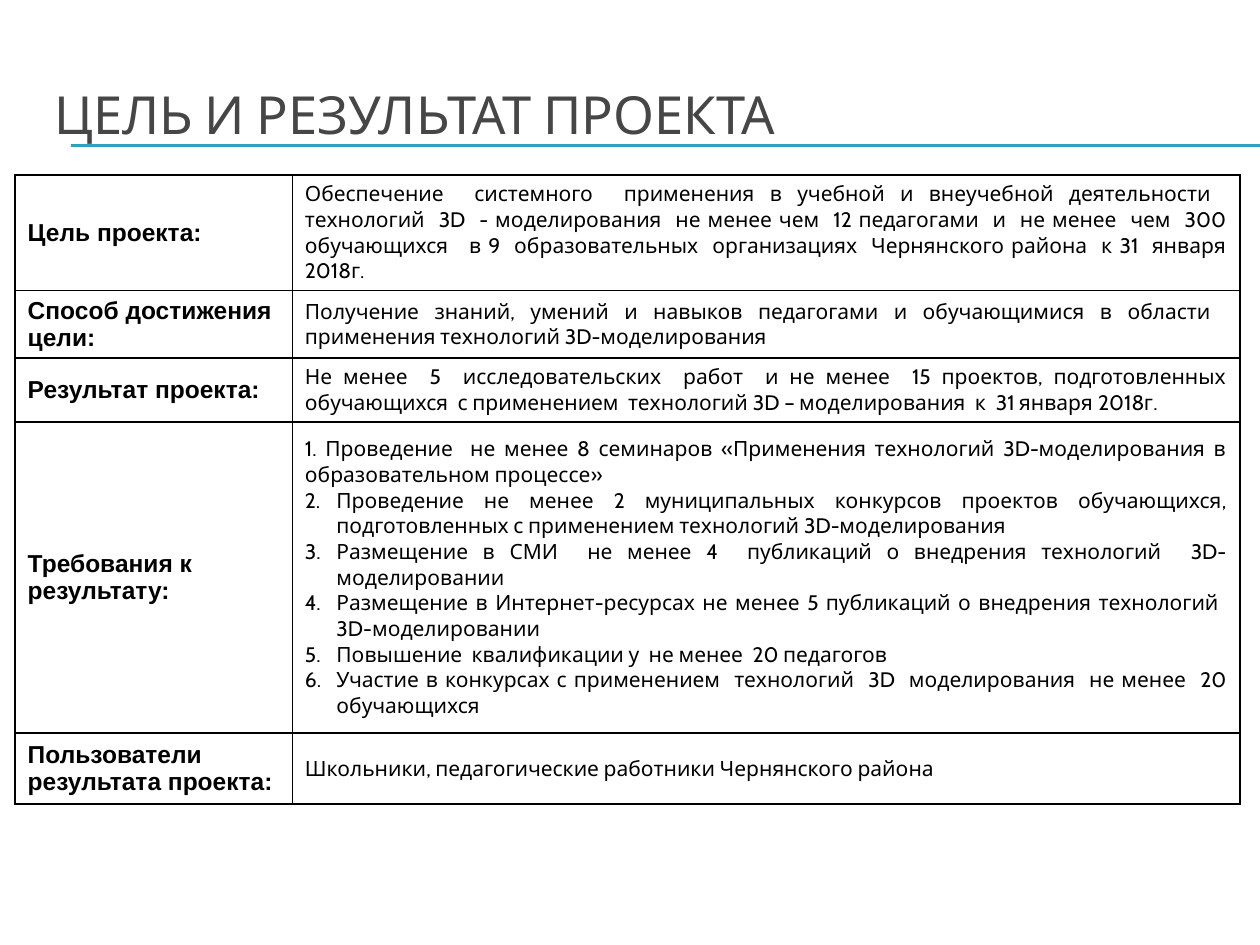
from dataclasses import dataclass

from lxml.etree import SubElement
from pptx import Presentation
from pptx.dml.color import RGBColor
from pptx.enum.shapes import MSO_CONNECTOR
from pptx.enum.text import MSO_ANCHOR, MSO_AUTO_SIZE, PP_ALIGN
from pptx.oxml.ns import qn
from pptx.util import Inches, Pt


@dataclass(frozen=True)
class Theme:
    heading: RGBColor = RGBColor(0x46, 0x46, 0x46)
    rule: RGBColor = RGBColor(0x2D, 0xA2, 0xBF)
    ink: RGBColor = RGBColor(0, 0, 0)
    border: str = "000000"
    body_font: str = "Cabin"
    label_font: str = "Arial"
    title_size: int = 30
    label_size: int = 14
    body_size: int = 12


theme = Theme()

# Each row: height, label, paragraphs
ROWS = [
    (0.6, "Цель проекта:", [
        "Обеспечение  системного  применения в учебной и внеучебной деятельности  "
        "технологий  3D  - моделирования  не менее чем  12 педагогами  и  не менее  чем  300 "
        "обучающихся   в 9  образовательных  организациях  Чернянского района  к 31  января 2018г."]),
    (0.51, "Способ достижения цели:", [
        "Получение знаний, умений и навыков педагогами и обучающимися в области  "
        "применения технологий 3D-моделирования"]),
    (0.43, "Результат проекта:", [
        "Не менее  5  исследовательских  работ  и не менее  15 проектов, подготовленных "
        "обучающихся  с применением  технологий 3D – моделирования  к  31 января 2018г."]),
    (2.47, "Требования к результату:", [
        "1. Проведение  не менее 8 семинаров «Применения технологий 3D-моделирования "
        "в образовательном процессе»",
        "Проведение не менее 2 муниципальных конкурсов проектов обучающихся, "
        "подготовленных с применением технологий 3D-моделирования ",
        "Размещение в СМИ  не менее 4  публикаций о внедрения технологий  3D-моделировании ",
        "Размещение в Интернет-ресурсах не менее 5 публикаций о внедрения технологий  "
        "3D-моделировании ",
        "Повышение  квалификации у  не менее  20 педагогов",
        "Участие в конкурсах с применением  технологий  3D  моделирования  не менее  20 обучающихся"]),
    (0.56, "Пользователи результата проекта:", [
        "Школьники, педагогические работники Чернянского района"]),
]
COLUMN_WIDTHS = (2.2, 7.52)


def style_paragraph(para, font, size, color, bold=False):
    for span in para.runs:
        span.font.name = font
        span.font.size = Pt(size)
        span.font.color.rgb = color
        span.font.bold = bold


def prepare_cell(cell):
    """Clear the fill, centre the text vertically and draw all four borders."""
    cell.vertical_anchor = MSO_ANCHOR.MIDDLE
    properties = cell._tc.get_or_add_tcPr()
    for side in ("a:lnL", "a:lnR", "a:lnT", "a:lnB"):
        line = SubElement(properties, qn(side), w=str(Pt(1)))
        fill = SubElement(line, qn("a:solidFill"))
        SubElement(fill, qn("a:srgbClr"), val=theme.border)
    cell.fill.background()


deck = Presentation()
deck.slide_width, deck.slide_height = Inches(10), Inches(7.5)
page = deck.slides.add_slide(deck.slide_layouts[5])

for y in (1.15, 1.16):
    rule = page.shapes.add_connector(
        MSO_CONNECTOR.STRAIGHT, Inches(0.56), Inches(y), Inches(10), Inches(y))
    rule.line.color.rgb = theme.rule
    rule.line.width = Pt(0.75)
    SubElement(rule._element.spPr, qn("a:effectLst"))

title = page.shapes.title
title.left, title.top, title.width, title.height = map(Inches, (0.33, 0.44, 9.5, 0.92))
title.text_frame.text = "ЦЕЛЬ И РЕЗУЛЬТАТ ПРОЕКТА"
title.text_frame.vertical_anchor = MSO_ANCHOR.MIDDLE
title.text_frame.auto_size = MSO_AUTO_SIZE.NONE
heading = title.text_frame.paragraphs[0]
heading.alignment = PP_ALIGN.LEFT
style_paragraph(heading, theme.body_font, theme.title_size, theme.heading)

table = page.shapes.add_table(
    len(ROWS), len(COLUMN_WIDTHS), Inches(0.12), Inches(1.39),
    Inches(sum(COLUMN_WIDTHS)), Inches(sum(row[0] for row in ROWS))).table
table.first_row = table.horz_banding = False
for column, width in zip(table.columns, COLUMN_WIDTHS):
    column.width = Inches(width)

for row, (height, label, paragraphs) in zip(table.rows, ROWS):
    row.height = Inches(height)
    label_cell, body_cell = row.cells
    for cell in (label_cell, body_cell):
        prepare_cell(cell)

    label_cell.text_frame.text = label
    style_paragraph(label_cell.text_frame.paragraphs[0],
                    theme.label_font, theme.label_size, theme.ink, bold=True)

    body_cell.text_frame.text = "\n".join(paragraphs)
    for index, para in enumerate(body_cell.text_frame.paragraphs):
        para.alignment = PP_ALIGN.JUSTIFY
        style_paragraph(para, theme.body_font, theme.body_size, theme.ink)
        if index:  # the first item carries its number in the text
            properties = para._p.get_or_add_pPr()
            properties.set("marL", str(Inches(0.25)))
            properties.set("indent", str(Inches(-0.25)))
            SubElement(properties, qn("a:buAutoNum"), type="arabicPeriod", startAt="2")

deck.save("out.pptx")
